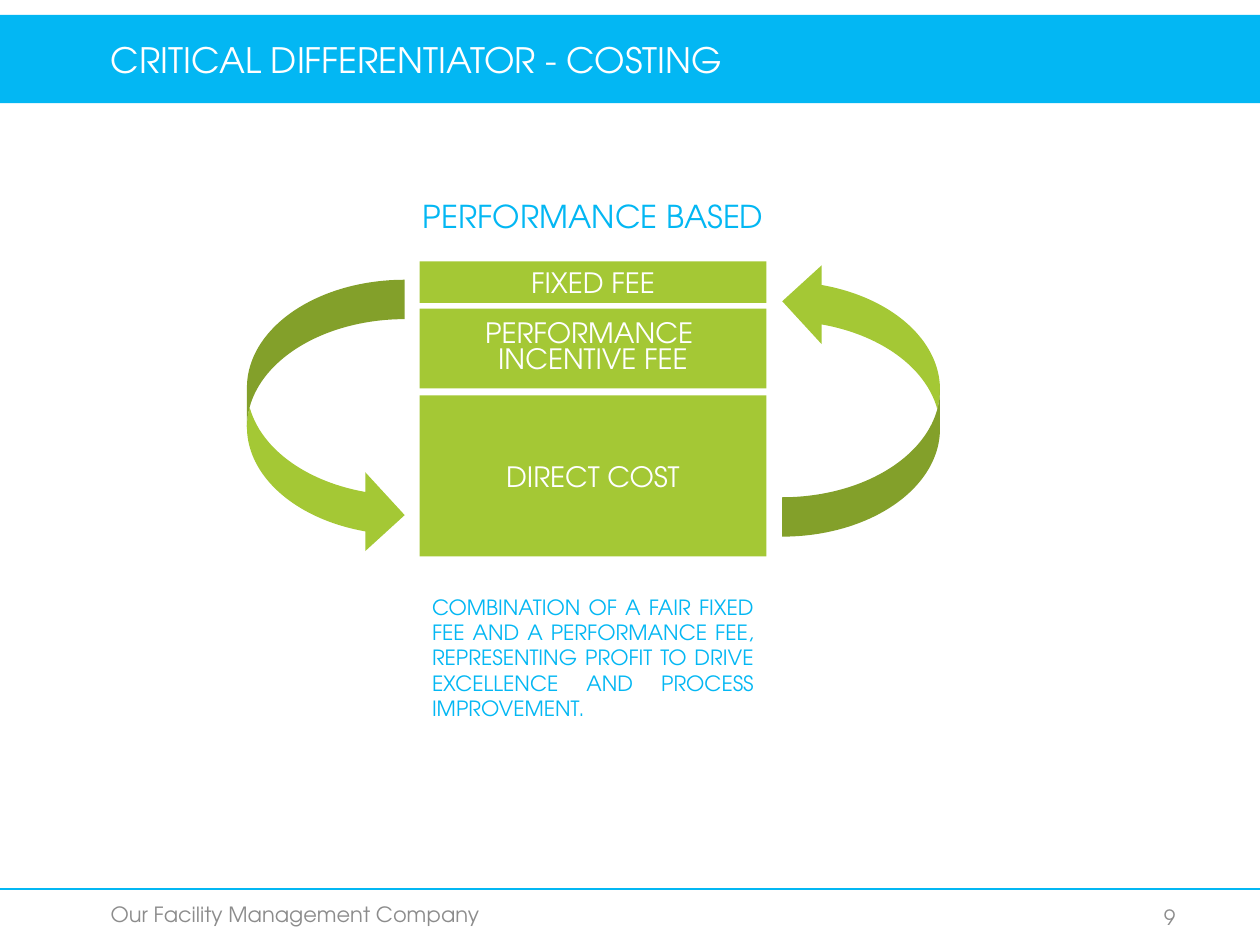
from lxml.etree import SubElement
from pptx import Presentation
from pptx.dml.color import RGBColor
from pptx.enum.shapes import MSO_CONNECTOR, MSO_SHAPE
from pptx.enum.text import MSO_ANCHOR, MSO_AUTO_SIZE, PP_ALIGN
from pptx.oxml.ns import qn
from pptx.util import Cm, Pt

FONT = "TeX Gyre Adventor"
COLORS = {"blue": "03B7F3", "green": "A4C835", "grey": "8C8C8C", "white": "FFFFFF"}

TITLE = "CRITICAL DIFFERENTIATOR - COSTING"
HEADING = "PERFORMANCE BASED"
SUMMARY = ("COMBINATION OF A FAIR FIXED FEE AND A PERFORMANCE FEE, REPRESENTING "
           "PROFIT TO DRIVE EXCELLENCE AND PROCESS IMPROVEMENT.")
FOOTER = "Our Facility Management Company"
PAGE_NUMBER = "9"

# Fee blocks from top to bottom: lines of text, top, height, line spacing
FEE_BLOCKS = [
    (["FIXED FEE"], 5.27, 0.84, 1.0),
    (["PERFORMANCE ", "INCENTIVE FEE"], 6.22, 1.61, 0.8),
    (["DIRECT COST"], 7.97, 3.25, 1.0),
]
# Cycle arrows: left, top, mirrored axis
CYCLE_ARROWS = [(15.77, 5.28, "flipV"), (4.98, 5.64, "flipH")]

PAGE_WIDTH, PAGE_HEIGHT = 25.4, 19.05
MARGIN_LEFT = 1.98
BANNER_TOP, BANNER_HEIGHT = 0.3, 1.78
STACK_LEFT, STACK_WIDTH = 8.46, 6.99
ARROW_WIDTH, ARROW_HEIGHT = 3.18, 5.54
FOOTER_LINE = 17.92


def color(name):
    return RGBColor.from_string(COLORS[name])


def place(shape, left, top, width, height):
    shape.left, shape.top = Cm(left), Cm(top)
    shape.width, shape.height = Cm(width), Cm(height)


def write(shape, *lines, size, tint, align=PP_ALIGN.LEFT, anchor=MSO_ANCHOR.MIDDLE, spacing=1.0):
    """Fill a shape with one formatted paragraph per line."""
    frame = shape.text_frame
    frame.word_wrap = True
    frame.auto_size = MSO_AUTO_SIZE.NONE
    frame.vertical_anchor = anchor
    for index, line in enumerate(lines):
        para = frame.add_paragraph() if index else frame.paragraphs[0]
        para.alignment = align
        para.line_spacing = spacing
        span = para.add_run()
        span.text = line
        span.font.name, span.font.size = FONT, Pt(size)
        span.font.color.rgb = color(tint)


def add_text(page, text, left, top, width, height, **style):
    box = page.shapes.add_textbox(Cm(left), Cm(top), Cm(width), Cm(height))
    write(box, text, **style)


def add_filled(page, kind, left, top, width, height, fill):
    shape = page.shapes.add_shape(kind, Cm(left), Cm(top), Cm(width), Cm(height))
    shape.shadow.inherit = False
    shape.fill.solid()
    shape.fill.fore_color.rgb = color(fill)
    shape.line.fill.background()
    return shape


def add_banner(page):
    banner = add_filled(page, MSO_SHAPE.RECTANGLE, 0, BANNER_TOP, PAGE_WIDTH, BANNER_HEIGHT, "blue")
    title = page.shapes.title
    place(title, MARGIN_LEFT, BANNER_TOP, 20.7, BANNER_HEIGHT)
    write(title, TITLE, size=20, tint="white")
    banner._element.addnext(title._element)  # the title lies above its banner


def add_footer(page):
    line = page.shapes.add_connector(
        MSO_CONNECTOR.STRAIGHT, Cm(0), Cm(FOOTER_LINE), Cm(PAGE_WIDTH), Cm(FOOTER_LINE))
    line.line.color.rgb = color("blue")
    line.line.width = Pt(1)
    SubElement(line._element.spPr, qn("a:effectLst"))
    add_text(page, FOOTER, MARGIN_LEFT, FOOTER_LINE, 8.05, 1.02, size=12, tint="grey")
    add_text(page, PAGE_NUMBER, 18.03, 17.98, 5.92, 1.02,
             size=12, tint="grey", align=PP_ALIGN.RIGHT)


def add_fee_cycle(page):
    for lines, top, height, spacing in FEE_BLOCKS:
        block = add_filled(page, MSO_SHAPE.RECTANGLE, STACK_LEFT, top, STACK_WIDTH, height, "green")
        write(block, *lines, size=16, tint="white", align=PP_ALIGN.CENTER, spacing=spacing)
    for left, top, mirror in CYCLE_ARROWS:
        arrow = add_filled(page, MSO_SHAPE.CURVED_LEFT_ARROW,
                           left, top, ARROW_WIDTH, ARROW_HEIGHT, "green")
        arrow._element.spPr.xfrm.set(mirror, "1")


def main():
    deck = Presentation()
    deck.slide_width, deck.slide_height = Cm(PAGE_WIDTH), Cm(PAGE_HEIGHT)
    page = deck.slides.add_slide(deck.slide_layouts.get_by_name("Title Only"))
    add_footer(page)
    add_banner(page)
    add_text(page, HEADING, 8.15, 3.84, 7.62, 1.02,
             size=18, tint="blue", align=PP_ALIGN.CENTER)
    add_fee_cycle(page)
    add_text(page, SUMMARY, STACK_LEFT, 11.86, STACK_WIDTH, 2.82,
             size=12, tint="blue", align=PP_ALIGN.JUSTIFY, anchor=MSO_ANCHOR.TOP)
    deck.save("out.pptx")


if __name__ == "__main__":
    main()
